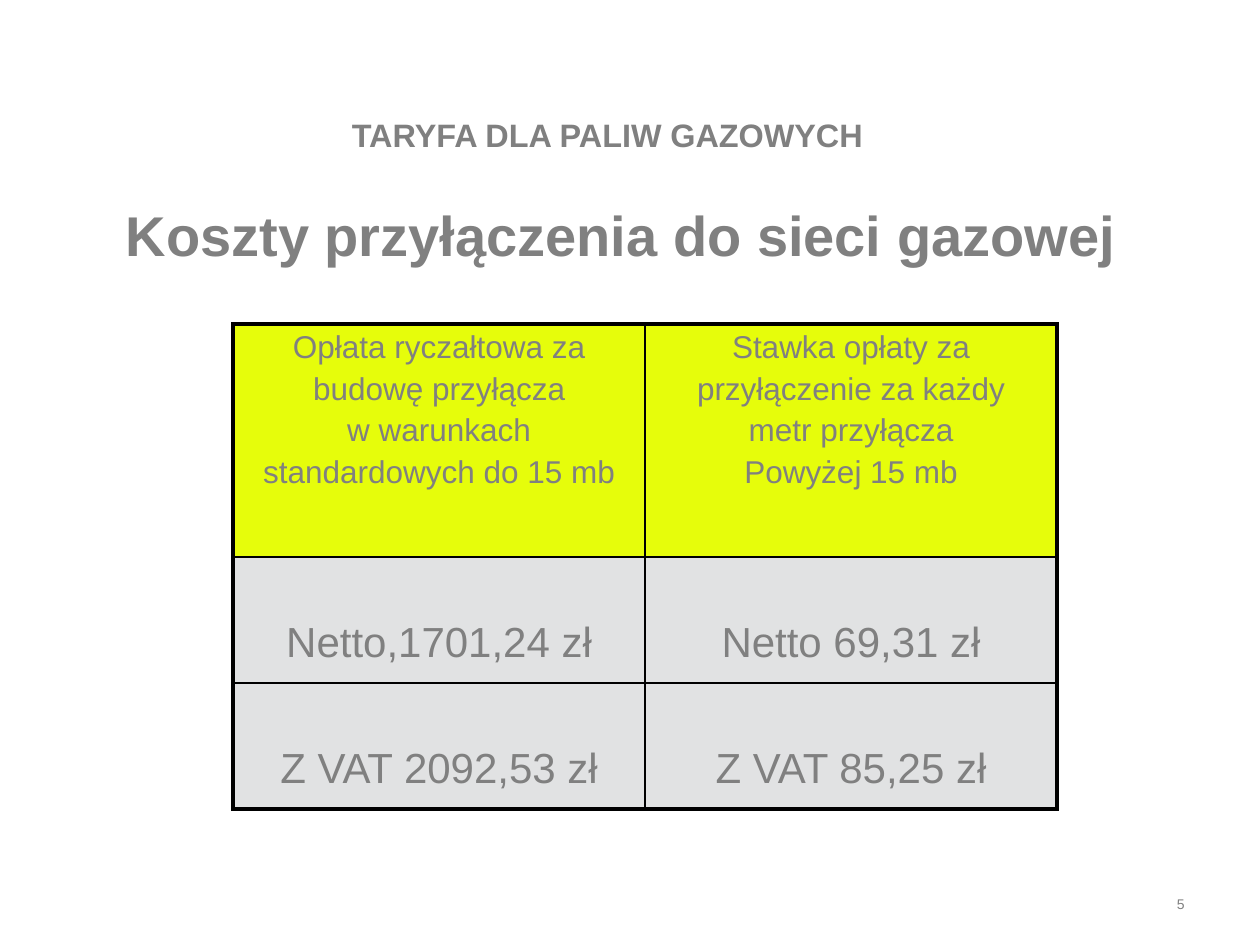
from lxml import etree
from pptx import Presentation, util as u
from pptx.dml.color import RGBColor
from pptx.enum import text
from pptx.oxml.ns import qn

GREY = RGBColor(0x80, 0x80, 0x80)
YELLOW = RGBColor(0xE6, 0xFD, 0x0B)
PALE = RGBColor(0xE1, 0xE2, 0xE3)
BLACK = RGBColor(0, 0, 0)

deck = Presentation()
deck.slide_width, deck.slide_height = u.Inches(10), u.Inches(7.5)
COLUMN = deck.slide_width / 100
ROW = deck.slide_height / 75
page = deck.slides.add_slide(deck.slide_layouts[5])


def grid(left, top, width, height):
    """Turn columns and rows of the slide grid into lengths."""
    return [u.Emu(round(value * unit)) for value, unit in
            zip((left, top, width, height), (COLUMN, ROW, COLUMN, ROW))]


def write(frame, lines, size, bold=False, align=text.PP_ALIGN.CENTER):
    frame.word_wrap = True
    for number, line in enumerate(lines):
        para = frame.paragraphs[0] if number == 0 else frame.add_paragraph()
        para.alignment = align
        para.space_before = u.Pt(0.2 * size if number else 0)
        span = para.add_run()
        span.text = line
        span.font.color.rgb = GREY
        for name, value in {"name": "Arial", "size": u.Pt(size), "bold": bold}.items():
            setattr(span.font, name, value)


# Headings
title = page.shapes.title
title.left, title.top, title.width, title.height = grid(4.3, 12.3, 90, 12.5)
title.text_frame.auto_size = text.MSO_AUTO_SIZE.NONE
title.text_frame.vertical_anchor = text.MSO_ANCHOR.MIDDLE
write(title.text_frame, ["Koszty przyłączenia do sieci gazowej"], 32, bold=True)

tariff = page.shapes.add_textbox(*grid(3.2, 2.8, 90, 12.5)).text_frame
tariff.vertical_anchor = text.MSO_ANCHOR.MIDDLE
tariff.margin_top = round(3.8 * ROW)
write(tariff, ["TARYFA DLA PALIW GAZOWYCH"], 18.5, bold=True)

# Connection costs
HEADERS = [
    ["Opłata ryczałtowa za", "budowę przyłącza", "w warunkach", "standardowych do 15 mb"],
    ["Stawka opłaty za", "przyłączenie za każdy", "metr przyłącza", "Powyżej 15 mb"],
]
COSTS = [
    HEADERS,
    [["Netto,1701,24 zł"], ["Netto 69,31 zł"]],
    [["Z VAT 2092,53 zł"], ["Z VAT 85,25 zł"]],
]
ROW_HEIGHTS = [18.5, 10, 10]
OUTER, INNER = u.Pt(2.25), u.Pt(1)

table = page.shapes.add_table(3, 2, *grid(18.5, 25.7, 65.4, sum(ROW_HEIGHTS))).table
for row, height in zip(table.rows, ROW_HEIGHTS):
    row.height = round(height * ROW)

for r, costs in enumerate(COSTS):
    for c, lines in enumerate(costs):
        cell = table.cell(r, c)
        on_edge = {"lnL": c == 0, "lnR": c == 1, "lnT": r == 0, "lnB": r == 2}
        properties = cell._tc.get_or_add_tcPr()
        for side, outer in on_edge.items():
            line = etree.SubElement(properties, qn(f"a:{side}"), w=str(OUTER if outer else INNER))
            fill = etree.SubElement(line, qn("a:solidFill"))
            etree.SubElement(fill, qn("a:srgbClr"), val=str(BLACK))
        cell.fill.solid()
        cell.fill.fore_color.rgb = PALE if r else YELLOW
        cell.vertical_anchor = text.MSO_ANCHOR.TOP
        cell.margin_top = round((5 if r else 0.5) * ROW)
        write(cell.text_frame, lines, 24 if r else 18)

# Page number
number_box = page.shapes.add_textbox(*grid(71.7, 69.3, 23.3, 3.6)).text_frame
number_box.vertical_anchor = text.MSO_ANCHOR.BOTTOM
write(number_box, ["5"], 8, align=text.PP_ALIGN.RIGHT)

deck.save("out.pptx")
